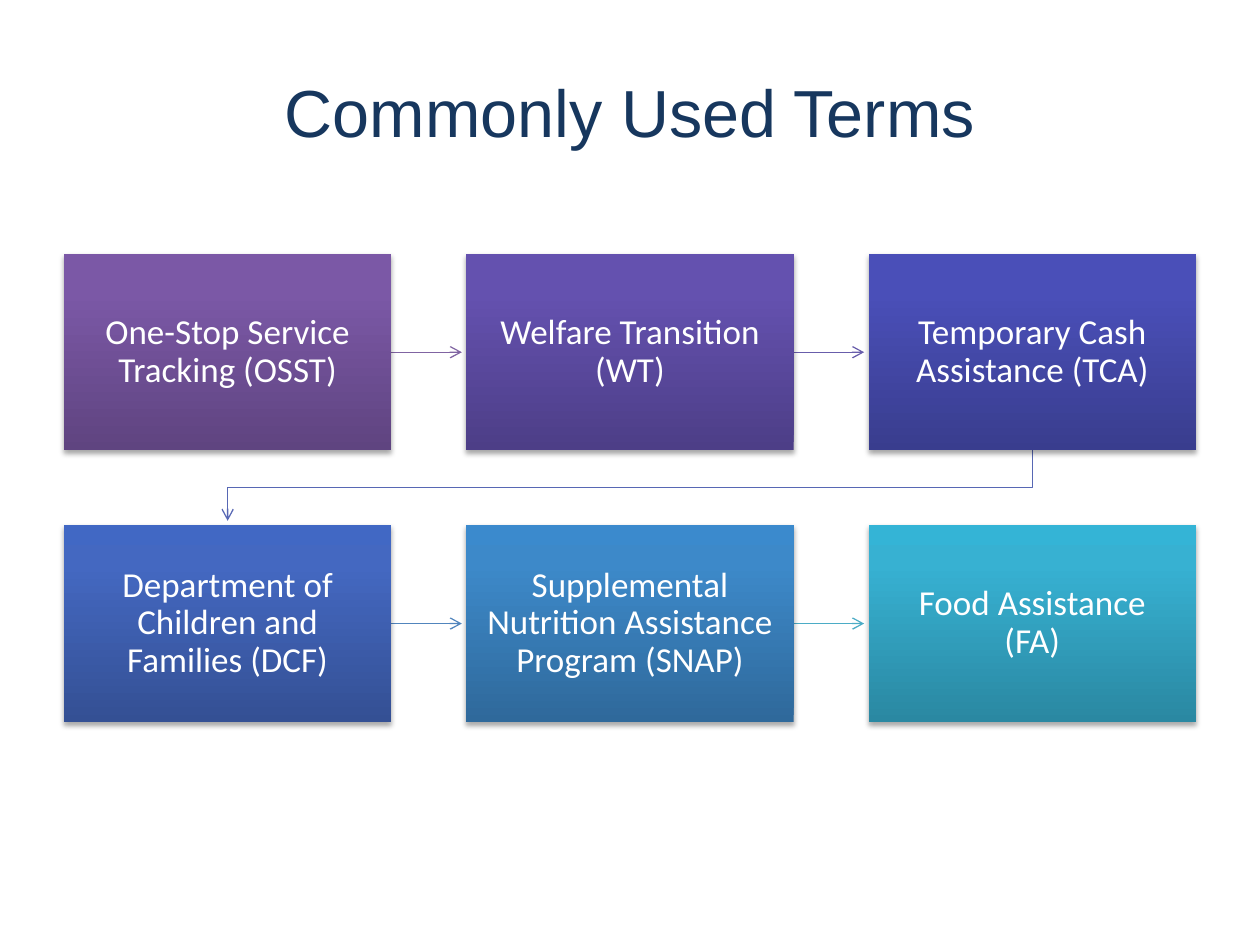
from copy import deepcopy

from lxml.etree import SubElement
from pptx import Presentation
from pptx.dml.color import RGBColor
from pptx.enum.shapes import MSO_CONNECTOR, MSO_SHAPE
from pptx.enum.text import MSO_ANCHOR, PP_ALIGN
from pptx.oxml import parse_xml
from pptx.oxml.ns import nsdecls, qn
from pptx.util import Cm, Pt

TITLE = "Commonly Used Terms"
TERMS = [
    ("One-Stop Service Tracking (OSST)", ("5F4480", "7B58A6", "7C57A8")),
    ("Welfare Transition (WT)", ("4D3E87", "6451AF", "6450B2")),
    ("Temporary Cash Assistance (TCA)", ("393D8E", "4A4FB8", "484EBB")),
    ("Department of Children and Families (DCF)", ("345094", "4468C1", "4168C4")),
    ("Supplemental Nutrition Assistance Program (SNAP)", ("2F699B", "3D89C9", "3B8ACD")),
    ("Food Assistance (FA)", ("2A88A2", "37B1D2", "34B4D6")),
]
ARROW_COLOURS = ["8064A2", "685DAB", "5767B4", "5185BD", "4BACC6"]
STOPS = (0, 0.8, 1)
COLUMNS = 3
LEFT, TOP = Cm(1.29), Cm(5.12)
WIDTH, HEIGHT = Cm(6.6), Cm(3.96)
COLUMN_STEP, ROW_STEP = Cm(8.11), Cm(5.47)
ARROW_GAP = Cm(0.09)
SHADOW = (
    f'<a:outerShdw {nsdecls("a")} blurRad="39370" dist="22860" dir="5400000" rotWithShape="0">'
    '<a:srgbClr val="000000"><a:alpha val="35000"/></a:srgbClr></a:outerShdw>'
)


def colour(value):
    """Turn a hex string into a colour."""
    return RGBColor.from_string(value)


def write(shape, text, font, size, shade):
    """Put centred text in a shape and format it."""
    frame = shape.text_frame
    frame.text = text
    frame.word_wrap = True
    frame.vertical_anchor = MSO_ANCHOR.MIDDLE
    para = frame.paragraphs[0]
    para.alignment = PP_ALIGN.CENTER
    span = para.runs[0]
    span.font.name, span.font.size = font, Pt(size)
    span.font.color.rgb = colour(shade)
    return para


def place(index):
    """Give the left and top of a term box in the grid."""
    row, column = divmod(index, COLUMNS)
    return LEFT + column * COLUMN_STEP, TOP + row * ROW_STEP


def paint_gradient(box, shades):
    """Fill a box with a vertical gradient, darkest at the bottom."""
    box.fill.gradient()
    box.fill.gradient_angle = 90
    stop_list = box.element.spPr.find(".//" + qn("a:gsLst"))
    stop_list.append(deepcopy(stop_list[0]))
    for stop, position, shade in zip(box.fill.gradient_stops, STOPS, shades):
        stop.position = position
        stop.color.rgb = colour(shade)


def add_term(page, index):
    """Draw one term box."""
    text, shades = TERMS[index]
    box = page.shapes.add_shape(MSO_SHAPE.RECTANGLE, *place(index), WIDTH, HEIGHT)
    paint_gradient(box, shades)
    box.line.fill.background()
    box.shadow.inherit = False
    box.element.spPr.find(qn("a:effectLst")).append(parse_xml(SHADOW))
    para = write(box, text, "Calibri", 20, "FFFFFF")
    para.line_spacing = 0.9
    frame = box.text_frame
    frame.margin_left = frame.margin_right = Cm(0.41)
    frame.margin_top = frame.margin_bottom = Cm(0.41)


def add_arrow(page, index):
    """Draw the arrow from one term box to the next."""
    left, top = place(index)
    next_left, next_top = place(index + 1)
    if top == next_top:
        middle = top + HEIGHT // 2
        arrow = page.shapes.add_connector(
            MSO_CONNECTOR.STRAIGHT, left + WIDTH, middle, next_left - ARROW_GAP, middle
        )
    else:
        start, end = left + WIDTH // 2, next_left + WIDTH // 2
        bottom = top + HEIGHT
        bend = (bottom + next_top) // 2
        builder = page.shapes.build_freeform(start, bottom)
        builder.add_line_segments(
            [(start, bend), (end, bend), (end, next_top - ARROW_GAP)], close=False
        )
        arrow = builder.convert_to_shape()
        arrow.fill.background()
    arrow.line.color.rgb = colour(ARROW_COLOURS[index])
    arrow.line.width = Pt(0.75)
    properties = arrow.element.spPr
    SubElement(properties.find(qn("a:ln")), qn("a:tailEnd"), type="arrow")
    SubElement(properties, qn("a:effectLst"))


def main():
    """Build and save the slide."""
    deck = Presentation()
    deck.slide_width, deck.slide_height = Cm(25.4), Cm(19.05)
    page = deck.slides.add_slide(deck.slide_layouts[5])
    title = page.shapes.title
    title.left, title.top, title.width, title.height = Cm(1.27), Cm(1.07), Cm(22.86), Cm(2.34)
    write(title, TITLE, "Arial", 38, "17375E")
    for index in range(len(TERMS)):
        if index < len(ARROW_COLOURS):
            add_arrow(page, index)
        add_term(page, index)
    deck.save("out.pptx")


if __name__ == "__main__":
    main()
